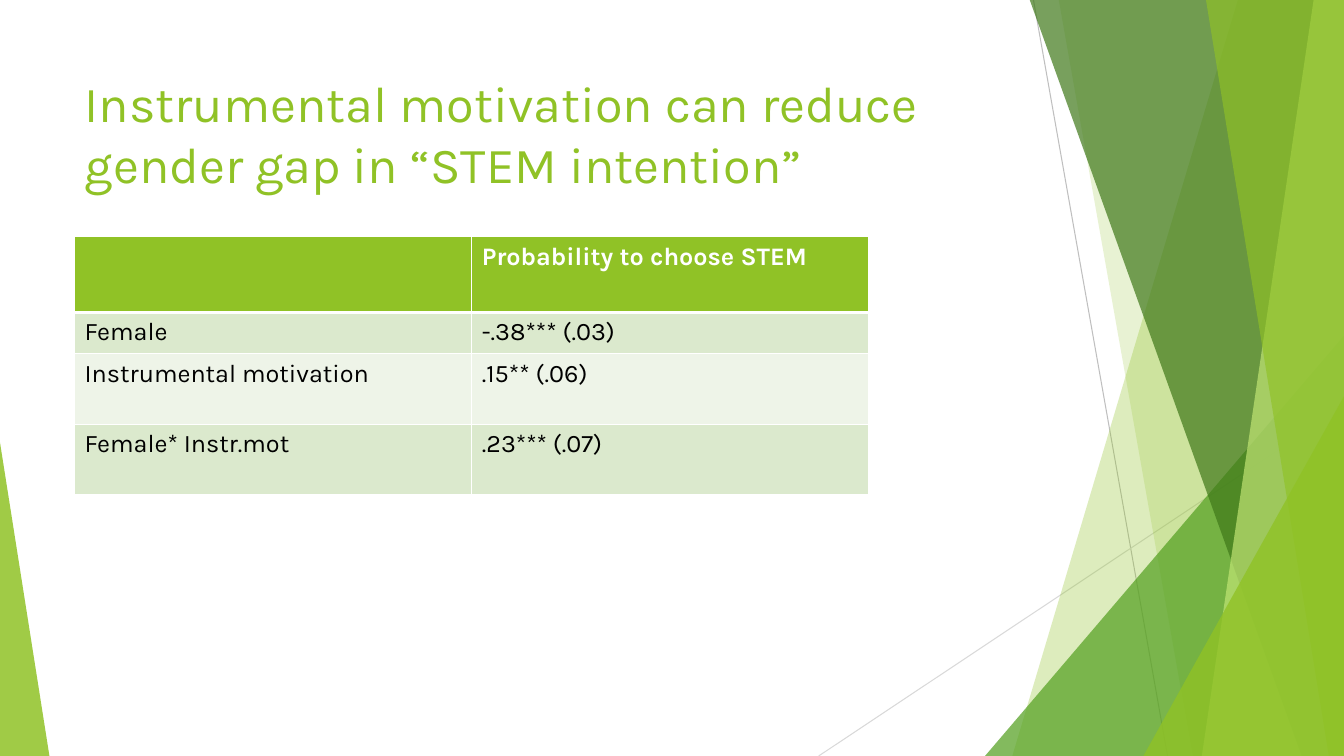
import pptx
import pptx.dml.color
import pptx.enum.shapes
import pptx.enum.text
import pptx.oxml.ns
import pptx.util
from lxml import etree

Inches, Pt = pptx.util.Inches, pptx.util.Pt
qn = pptx.oxml.ns.qn

FONT = "Karla"
GREEN, WHITE, BLACK = "90C226", "FFFFFF", "000000"
TITLE = "Instrumental motivation can reduce gender gap in “STEM intention”"
RESULTS = [
    ("", "Probability to choose STEM"),
    ("Female", "-.38*** (.03)"),
    ("Instrumental motivation", ".15** (.06)"),
    ("Female* Instr.mot", ".23*** (.07)"),
]
ROW_HEIGHTS = [0.75, 0.41, 0.7, 0.7]
ROW_FILLS = [GREEN, "DBE9CD", "EEF4E8", "DBE9CD"]
COLUMN_WIDTH = 3.94

WIDTH, HEIGHT, BAND_TOP = 13.33, 7.5, -0.01
# Thin lines: start, end, colour
RAYS = [
    ((10.25, 0), (11.58, HEIGHT), "BFBFBF"),
    ((WIDTH, 4.03), (8.12, HEIGHT), "D9D9D9"),
]
# Facets from back to front.
# band: top-left x, bottom-left x, colour, opacity (reaches the right edge)
# triangle: left, top, width, apex position, colour, opacity (reaches the bottom)
FACETS = [
    ("band", 12.28, 10.04, GREEN, 30),
    ("band", 10.5, 11.83, GREEN, 20),
    ("triangle", 9.77, 3.33, 3.56, 1, "54A021", 72),
    ("band", 10.21, 12.91, "3F7819", 70),
    ("band", 13.03, 11.92, "C0E474", 70),
    ("band", 11.96, 13.18, GREEN, 65),
    ("triangle", 11.34, 3.93, 1.99, 1, GREEN, 80),
    ("triangle", 0, 4.39, 0.49, 0, GREEN, 85),
]


def rgb(color):
    return pptx.dml.color.RGBColor.from_string(color)


def paint(facet, color, opacity):
    facet.shadow.inherit = False
    facet.line.fill.background()
    facet.fill.solid()
    facet.fill.fore_color.rgb = rgb(color)
    srgb = facet.fill._xPr.find(qn("a:solidFill"))[0]
    etree.SubElement(srgb, qn("a:alpha"), val=str(opacity * 1000))


def add_ray(shapes, start, end, color):
    ray = shapes.add_connector(
        pptx.enum.shapes.MSO_CONNECTOR.STRAIGHT,
        *(Inches(v) for v in start + end))
    ray.line.color.rgb = rgb(color)
    ray.line.width = Pt(0.75)
    etree.SubElement(ray._element.spPr, qn("a:effectLst"))


def add_band(shapes, top_x, bottom_x, color, opacity):
    outline = shapes.build_freeform(Inches(top_x), Inches(BAND_TOP))
    corners = [(WIDTH, BAND_TOP), (WIDTH, HEIGHT), (bottom_x, HEIGHT)]
    outline.add_line_segments([(Inches(x), Inches(y)) for x, y in corners])
    paint(outline.convert_to_shape(), color, opacity)


def add_triangle(shapes, left, top, width, apex, color, opacity):
    triangle = shapes.add_shape(
        pptx.enum.shapes.MSO_SHAPE.ISOSCELES_TRIANGLE,
        Inches(left), Inches(top), Inches(width), Inches(HEIGHT - top))
    triangle.adjustments[0] = apex
    paint(triangle, color, opacity)


def set_borders(cell, bottom_width, top_width):
    properties = cell._tc.get_or_add_tcPr()
    sides = [("lnL", 1), ("lnR", 1), ("lnT", top_width), ("lnB", bottom_width)]
    for position, (side, width) in enumerate(sides):
        border = etree.Element(qn(f"a:{side}"), w=str(Pt(width)))
        fill = etree.SubElement(border, qn("a:solidFill"))
        etree.SubElement(fill, qn("a:srgbClr"), val=WHITE)
        properties.insert(position, border)


def add_results(shapes):
    results = shapes.add_table(
        len(RESULTS), 2, Inches(0.74), Inches(2.35),
        Inches(2 * COLUMN_WIDTH), Inches(sum(ROW_HEIGHTS))).table
    for column in results.columns:
        column.width = Inches(COLUMN_WIDTH)
    for r, texts in enumerate(RESULTS):
        results.rows[r].height = Inches(ROW_HEIGHTS[r])
        for c, text in enumerate(texts):
            cell = results.cell(r, c)
            cell.text = text
            cell.fill.solid()
            cell.fill.fore_color.rgb = rgb(ROW_FILLS[r])
            set_borders(cell, 3 if r == 0 else 1, 3 if r == 1 else 1)
            font = cell.text_frame.paragraphs[0].font
            font.name, font.size, font.bold = FONT, Pt(18), r == 0
            font.color.rgb = rgb(WHITE if r == 0 else BLACK)


def main():
    deck = pptx.Presentation()
    deck.slide_width, deck.slide_height = Inches(WIDTH), Inches(HEIGHT)
    slide = deck.slides.add_slide(deck.slide_layouts[5])

    # Faceted backdrop
    for ray in RAYS:
        add_ray(slide.shapes, *ray)
    builders = {"band": add_band, "triangle": add_triangle}
    for kind, *details in FACETS:
        builders[kind](slide.shapes, *details)

    # Title
    title = slide.shapes.title
    title.left, title.top = Inches(0.74), Inches(0.67)
    title.width, title.height = Inches(9.4), Inches(1.44)
    frame = title.text_frame
    frame.text = TITLE
    frame.word_wrap = True
    frame.auto_size = pptx.enum.text.MSO_AUTO_SIZE.NONE
    frame.vertical_anchor = pptx.enum.text.MSO_ANCHOR.TOP
    heading = frame.paragraphs[0]
    heading.alignment = pptx.enum.text.PP_ALIGN.LEFT
    heading.font.name, heading.font.size = FONT, Pt(36)
    heading.font.color.rgb = rgb(GREEN)

    # Regression results
    add_results(slide.shapes)

    deck.save("out.pptx")


if __name__ == "__main__":
    main()
